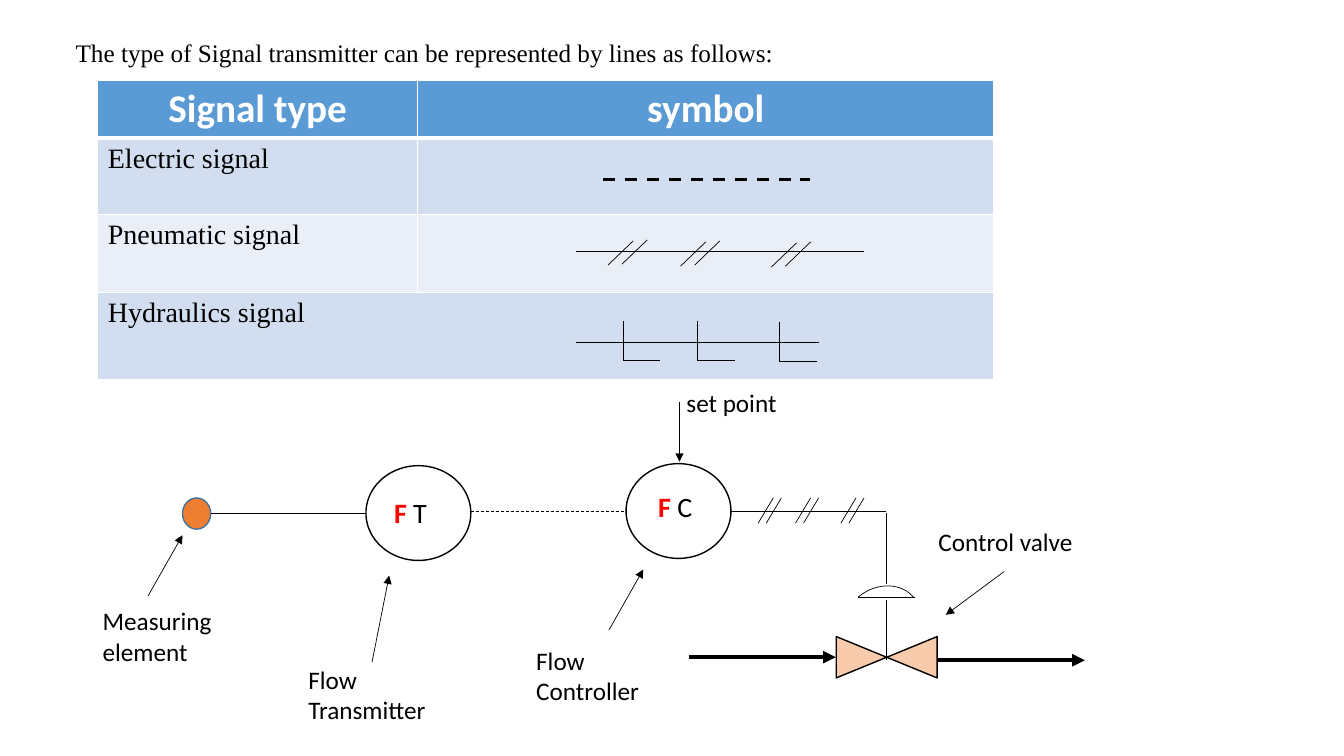
from dataclasses import dataclass

from lxml.etree import SubElement
from pptx import Presentation
from pptx.dml.color import RGBColor
from pptx.enum.dml import MSO_LINE
from pptx.enum.shapes import MSO_CONNECTOR, MSO_SHAPE
from pptx.enum.text import MSO_ANCHOR, MSO_AUTO_SIZE, PP_ALIGN
from pptx.oxml.ns import qn
from pptx.util import Pt

EMU_PER_PX = 9144


@dataclass(frozen=True)
class Theme:
    black: str = "000000"
    white: str = "FFFFFF"
    red: str = "FF0000"
    header: str = "5B9BD5"
    band_dark: str = "D2DEEF"
    band_light: str = "EAEFF7"
    sensor: str = "ED7D31"
    sensor_edge: str = "43739E"
    valve: str = "F8CBAD"
    sans: str = "Calibri"
    serif: str = "Times New Roman"
    label_size: int = 18
    tag_size: int = 20
    header_size: int = 28


def px(*lengths):
    return [length * EMU_PER_PX for length in lengths]


def apply_format(target, values):
    for name, value in values.items():
        setattr(target, name, value)


class SignalSlide:
    def __init__(self, page, theme):
        self.page = page
        self.theme = theme

    def add_span(self, para, text, size, font=None, color=None, bold=False):
        span = para.add_run()
        span.text = text
        apply_format(span.font, {"size": Pt(size), "name": font or self.theme.sans, "bold": bold})
        span.font.color.rgb = RGBColor.from_string(color or self.theme.black)

    def title(self, text, bounds):
        box = self.page.shapes.title
        apply_format(box, dict(zip(("left", "top", "width", "height"), px(*bounds))))
        apply_format(box.text_frame, {
            "word_wrap": True, "vertical_anchor": MSO_ANCHOR.TOP,
            "auto_size": MSO_AUTO_SIZE.SHAPE_TO_FIT_TEXT})
        para = box.text_frame.paragraphs[0]
        para.alignment = PP_ALIGN.LEFT
        self.add_span(para, text, self.theme.label_size, self.theme.serif)

    def text_box(self, bounds):
        frame = self.page.shapes.add_textbox(*px(*bounds)).text_frame
        apply_format(frame, {"word_wrap": True, "auto_size": MSO_AUTO_SIZE.SHAPE_TO_FIT_TEXT})
        return frame

    def label(self, lines, bounds):
        frame = self.text_box(bounds)
        for index, line in enumerate(lines):
            para = frame.add_paragraph() if index else frame.paragraphs[0]
            self.add_span(para, line, self.theme.label_size)

    def tag(self, letter, bounds):
        para = self.text_box(bounds).paragraphs[0]
        self.add_span(para, "F", self.theme.tag_size, color=self.theme.red, bold=True)
        self.add_span(para, f" {letter}", self.theme.tag_size)

    def shape(self, kind, bounds, fill=None, edge=None, weight=1, rotation=0):
        shape = self.page.shapes.add_shape(kind, *px(*bounds))
        shape.shadow.inherit = False
        shape.rotation = rotation
        if fill:
            shape.fill.solid()
            shape.fill.fore_color.rgb = RGBColor.from_string(fill)
        else:
            shape.fill.background()
        shape.line.color.rgb = RGBColor.from_string(edge or self.theme.black)
        shape.line.width = Pt(weight)

    def line(self, start, end, weight=0.5, dash=None, arrow=False):
        line = self.page.shapes.add_connector(MSO_CONNECTOR.STRAIGHT, *px(*start, *end))
        line.line.color.rgb = RGBColor.from_string(self.theme.black)
        line.line.width = Pt(weight)
        if dash:
            line.line.dash_style = dash
        properties = line._element.spPr
        if arrow:
            SubElement(properties.find(qn("a:ln")), qn("a:tailEnd"), type="triangle")
        SubElement(properties, qn("a:effectLst"))

    def slashes(self, tops, twin, run, drop):
        for x, y in tops:
            for left, top in ((x, y), (x + twin[0], y + twin[1])):
                self.line((left, top), (left - run, top + drop))

    def corners(self, tops, height, width):
        for x, y in tops:
            self.line((x, y), (x, y + height))
            self.line((x, y + height), (x + width, y + height))

    def border(self, cell, bottom):
        properties = cell._tc.get_or_add_tcPr()
        for side, weight in (("L", 1), ("R", 1), ("T", 1), ("B", bottom)):
            edge = SubElement(properties, qn(f"a:ln{side}"), w=str(Pt(weight)))
            paint = SubElement(edge, qn("a:solidFill"))
            SubElement(paint, qn("a:srgbClr"), val=self.theme.white)

    def table(self, rows, bounds, widths, heights):
        theme = self.theme
        table = self.page.shapes.add_table(len(rows), len(widths), *px(*bounds)).table
        for column, width in zip(table.columns, px(*widths)):
            column.width = width
        fills = (theme.header, theme.band_dark, theme.band_light, theme.band_dark)
        for index, (texts, height, fill) in enumerate(zip(rows, px(*heights), fills)):
            table.rows[index].height = height
            for position in range(len(widths)):
                cell = table.cell(index, position)
                self.border(cell, 1 if index else 3)
                cell.fill.solid()
                cell.fill.fore_color.rgb = RGBColor.from_string(fill)
                if position < len(texts):
                    para = cell.text_frame.paragraphs[0]
                    if index:
                        self.add_span(para, texts[position], theme.tag_size, theme.serif)
                    else:
                        para.alignment = PP_ALIGN.CENTER
                        self.add_span(para, texts[position], theme.header_size,
                                      color=theme.white, bold=True)
        last = len(rows) - 1
        table.cell(last, 0).merge(table.cell(last, len(widths) - 1))


def draw_signal_table(slide):
    slide.title("The type of Signal transmitter can be represented by lines as follows:",
                (65, 32, 734, 40))
    slide.table([("Signal type", "symbol"), ("Electric signal",),
                 ("Pneumatic signal",), ("Hydraulics signal",)],
                (97, 80, 889, 297), (317, 572), (57, 76, 77, 87))
    slide.line((598, 178), (803, 178), 2.25, MSO_LINE.DASH)
    slide.line((571, 249), (857, 249))
    slide.slashes([(628, 239), (700, 240), (790, 241)], (14, -1), 25, 24)
    slide.line((571, 340), (812, 340))
    slide.corners([(618, 318), (692, 318), (773, 319)], 40, 37)


def draw_control_loop(slide):
    theme = slide.theme
    slide.shape(MSO_SHAPE.OVAL, (181, 494, 28, 31), theme.sensor, theme.sensor_edge)
    for left, top in ((363, 462), (621, 460)):
        slide.shape(MSO_SHAPE.OVAL, (left, top, 104, 94), theme.white)
    slide.line((209, 509), (363, 509))
    slide.line((467, 507), (621, 507), dash=MSO_LINE.DASH)
    slide.line((725, 507), (879, 507))
    slide.slashes([(x, 494) for x in (767, 804, 849)], (8, 0), 15, 25)

    slide.shape(MSO_SHAPE.FLOWCHART_COLLATE, (859, 602, 41, 100), theme.valve, rotation=270)
    slide.line((879, 655), (879, 595))
    slide.line((851, 593), (908, 593))
    slide.shape(MSO_SHAPE.ARC, (832, 584, 84, 71), weight=0.5, rotation=320.2)
    slide.line((879, 509), (879, 579))
    for start, end in (((683, 652), (829, 652)), ((929, 655), (1076, 655))):
        slide.line(start, end, 3, arrow=True)

    for lines, bounds in (
            (["Measuring element"], (92, 596, 194, 71)),
            (["Flow", "Controller"], (522, 635, 194, 71)),
            (["Flow", "Transmitter"], (296, 654, 194, 71)),
            (["Control valve"], (921, 517, 194, 40)),
            (["set point"], (671, 379, 114, 40))):
        slide.label(lines, bounds)
    for start, end in (
            ((147, 591), (181, 531)), ((604, 625), (638, 565)), ((369, 657), (386, 571)),
            ((996, 567), (938, 610)), ((674, 399), (674, 458))):
        slide.line(start, end, arrow=True)
    slide.tag("T", (381, 487, 65, 44))
    slide.tag("C", (643, 481, 65, 44))


def main():
    deck = Presentation()
    deck.slide_width, deck.slide_height = px(1333, 750)
    page = deck.slides.add_slide(deck.slide_layouts[5])
    slide = SignalSlide(page, Theme())
    draw_signal_table(slide)
    draw_control_loop(slide)
    deck.save("out.pptx")


if __name__ == "__main__":
    main()
